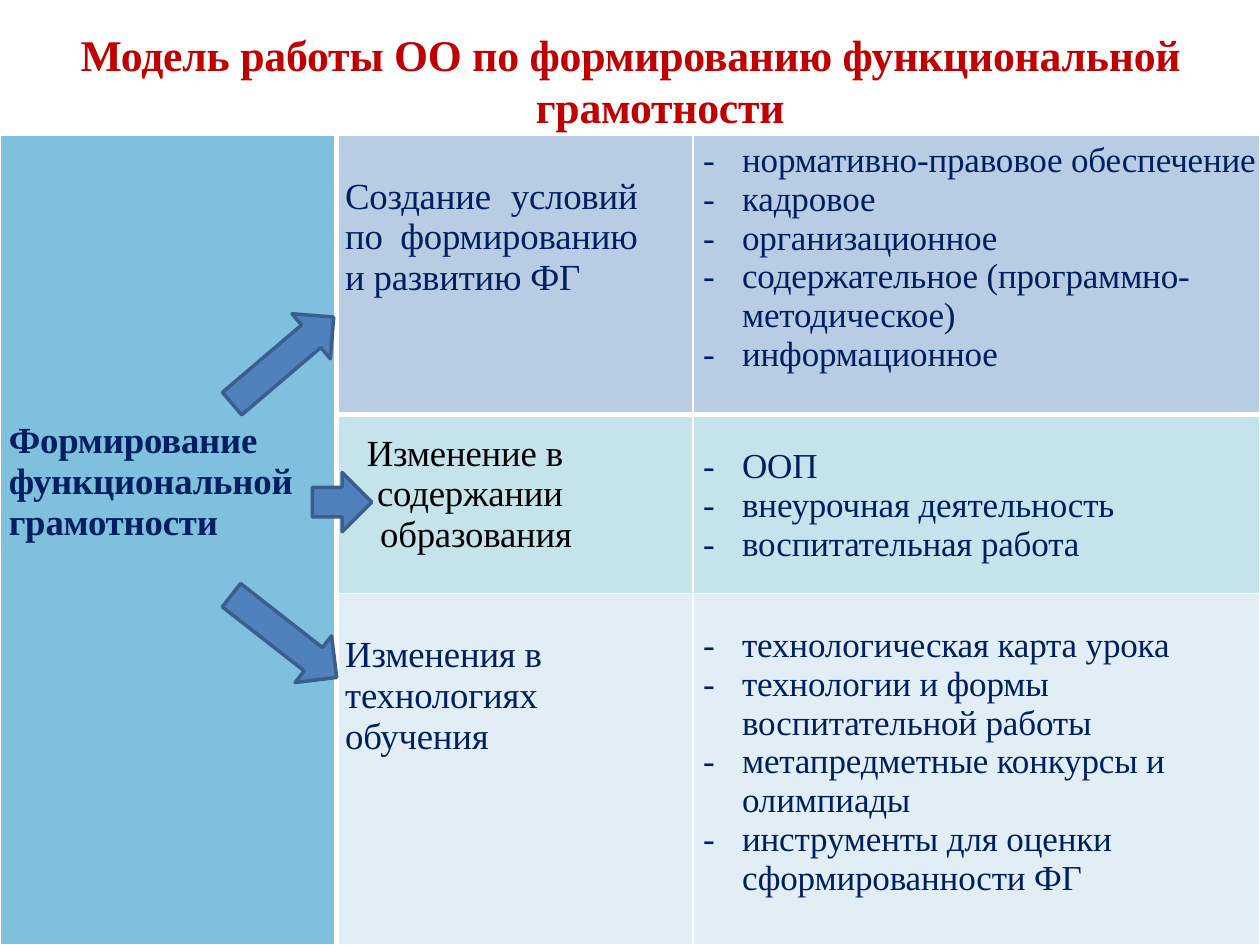
import lxml.etree
import pptx
import pptx.dml.color
import pptx.enum.shapes
import pptx.enum.text
import pptx.oxml.ns
import pptx.util

Inches = pptx.util.Inches
Pt = pptx.util.Pt
RGBColor = pptx.dml.color.RGBColor
ALIGN = pptx.enum.text.PP_ALIGN
ANCHOR = pptx.enum.text.MSO_ANCHOR
qn = pptx.oxml.ns.qn

RED = RGBColor(0xC0, 0x00, 0x00)
NAVY = RGBColor(0x00, 0x1F, 0x5F)
BLACK = RGBColor(0x00, 0x00, 0x00)
WHITE = RGBColor(0xFF, 0xFF, 0xFF)
SKY = RGBColor(0x80, 0xC0, 0xDF)
ARROW_FILL = RGBColor(0x4F, 0x81, 0xBD)
ARROW_LINE = RGBColor(0x3A, 0x5F, 0x8C)
ROW_FILLS = [RGBColor(0xB8, 0xCD, 0xE4), RGBColor(0xC4, 0xE3, 0xEA), RGBColor(0xE1, 0xEE, 0xF6)]

COLUMN_WIDTHS = [2.67, 2.83, 4.5]
ROW_HEIGHTS = [2.22, 1.42, 2.79]

GOAL = "Формирование функциональной грамотности"
DIRECTIONS = [
    ("Создание условий по формированию и развитию ФГ", ALIGN.JUSTIFY, NAVY, (0.07, 0.33, 0.44, 0)),
    ("Изменение в \vсодержании \vобразования", ALIGN.RIGHT, BLACK, (0.07, 0.15, 0.96, 0)),
    ("Изменения в технологиях обучения", ALIGN.LEFT, NAVY, (0.07, 0.33, 0.44, 0)),
]
MEASURES = [
    (0.05, ["нормативно-правовое обеспечение", "кадровое", "организационное",
            "содержательное (программно-методическое)", "информационное"]),
    (0.26, ["ООП", "внеурочная деятельность", "воспитательная работа"]),
    (0.26, ["технологическая карта урока", "технологии и формы воспитательной работы",
            "метапредметные конкурсы и олимпиады",
            "инструменты для оценки сформированности ФГ"]),
]
ARROWS = [
    (2.01, 2.33, 0.47, 1.06, 229.6),
    (2.48, 3.75, 0.47, 0.47, 270),
    (2.02, 4.52, 0.47, 1.06, 308),
]


def apply_format(target, values):
    for name, value in values.items():
        setattr(target, name, value)


def set_margins(target, margins):
    for side, margin in zip(("left", "top", "right", "bottom"), margins):
        setattr(target, "margin_" + side, Inches(margin))


def write_para(para, text, size, color, bold=False, align=ALIGN.LEFT):
    para.text = text
    apply_format(para, {"alignment": align, "space_before": Pt(0)})
    for span in para.runs:
        apply_format(span.font, {"name": "Times New Roman", "size": Pt(size), "bold": bold})
        span.font.color.rgb = color
        span.font._element.set("spc", "-10")


def set_indent(para, left, first):
    properties = para._p.get_or_add_pPr()
    properties.set("marL", str(Inches(left)))
    properties.set("indent", str(Inches(first)))
    return properties


def add_title(page):
    title = page.shapes.title
    apply_format(title, {"left": Inches(0.35), "top": Inches(0.21),
                         "width": Inches(9.29), "height": Inches(0.85)})
    frame = title.text_frame
    apply_format(frame, {"word_wrap": True, "vertical_anchor": ANCHOR.TOP,
                         "auto_size": pptx.enum.text.MSO_AUTO_SIZE.NONE})
    set_margins(frame, (0, 0.01, 0, 0))
    para = frame.paragraphs[0]
    write_para(para, "Модель работы ОО по формированию функциональной грамотности",
               25, RED, True, ALIGN.CENTER)
    apply_format(para, {"line_spacing": 1.0, "space_before": Pt(0.9)})
    set_indent(para, 0.49, -0.47)


def style_cell(cell, row, column):
    properties = cell._tc.get_or_add_tcPr()
    widths = {
        "lnL": 3 if column == 1 else 1,
        "lnR": 3 if column == 0 else 1,
        "lnT": 3 if row == 1 and column else 1,
        "lnB": 3 if row == 0 and column else 1,
    }
    for side, width in widths.items():
        line = lxml.etree.SubElement(properties, qn("a:" + side), w=str(Pt(width)))
        fill = lxml.etree.SubElement(line, qn("a:solidFill"))
        lxml.etree.SubElement(fill, qn("a:srgbClr"), val=str(WHITE))
    cell.fill.solid()
    cell.fill.fore_color.rgb = ROW_FILLS[row] if column else SKY
    set_margins(cell, (0, 0, 0, 0))


def write_list(cell, items):
    frame = cell.text_frame
    for index, item in enumerate(items):
        para = frame.add_paragraph() if index else frame.paragraphs[0]
        write_para(para, item, 20, NAVY)
        properties = set_indent(para, 0.39, -0.31)
        lxml.etree.SubElement(properties, qn("a:buFont"), typeface="Times New Roman")
        lxml.etree.SubElement(properties, qn("a:buChar"), char="-")


def add_model_table(page):
    table = page.shapes.add_table(3, 3, Inches(0), Inches(1.07), Inches(10), Inches(6.43)).table
    for column, width in zip(table.columns, COLUMN_WIDTHS):
        column.width = Inches(width)
    for row, height in zip(table.rows, ROW_HEIGHTS):
        row.height = Inches(height)
    for row in range(3):
        for column in range(3):
            style_cell(table.cell(row, column), row, column)

    goal = table.cell(0, 0)
    goal.merge(table.cell(2, 0))
    goal.vertical_anchor = ANCHOR.MIDDLE
    set_margins(goal, (0.07, 0, 0, 0.92))
    write_para(goal.text_frame.paragraphs[0], GOAL, 21, NAVY, True)

    for row, (text, align, color, margins) in enumerate(DIRECTIONS):
        cell = table.cell(row, 1)
        set_margins(cell, margins)
        write_para(cell.text_frame.paragraphs[0], text, 21, color, align=align)
    for row, (top, items) in enumerate(MEASURES):
        cell = table.cell(row, 2)
        cell.margin_top = Inches(top)
        write_list(cell, items)


def add_arrow(page, left, top, width, height, rotation):
    arrow = page.shapes.add_shape(pptx.enum.shapes.MSO_SHAPE.DOWN_ARROW, Inches(left),
                                  Inches(top), Inches(width), Inches(height))
    arrow.rotation = rotation
    arrow.shadow.inherit = False
    arrow.fill.solid()
    arrow.fill.fore_color.rgb = ARROW_FILL
    arrow.line.color.rgb = ARROW_LINE
    arrow.line.width = Pt(2)


def main():
    deck = pptx.Presentation()
    apply_format(deck, {"slide_width": Inches(10), "slide_height": Inches(7.5)})
    page = deck.slides.add_slide(deck.slide_layouts[5])
    add_title(page)
    add_model_table(page)
    for arrow in ARROWS:
        add_arrow(page, *arrow)
    deck.save("out.pptx")


if __name__ == "__main__":
    main()
